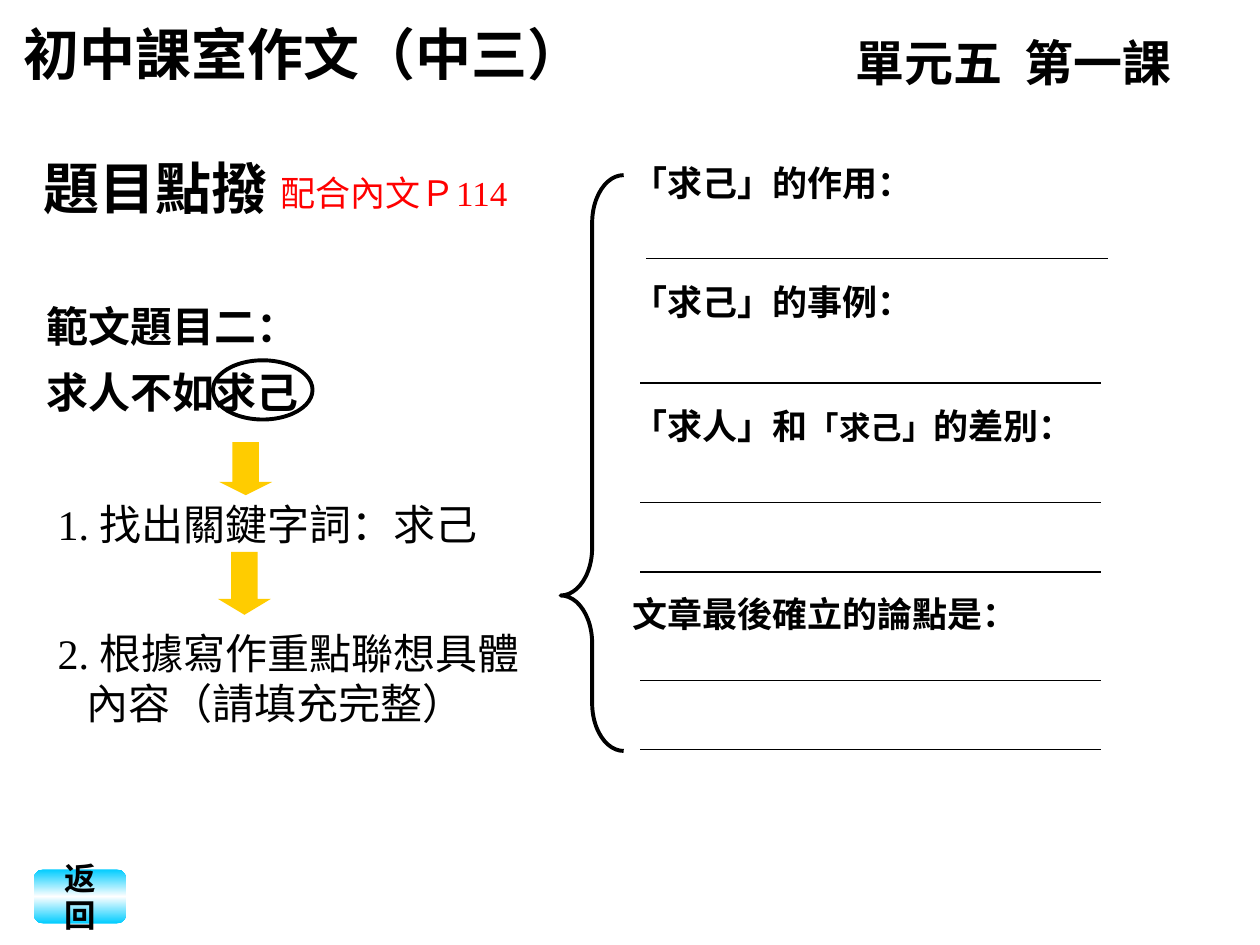
from copy import deepcopy

from lxml import etree
from pptx import Presentation
from pptx.dml.color import RGBColor
from pptx.enum.shapes import MSO_CONNECTOR, MSO_SHAPE
from pptx.enum.text import MSO_ANCHOR, PP_ALIGN
from pptx.oxml.ns import qn
from pptx.util import Inches, Pt

STRAIGHT = MSO_CONNECTOR.STRAIGHT
ELLIPSE = MSO_SHAPE.OVAL
DOWN_ARROW = MSO_SHAPE.DOWN_ARROW
RIGHT_ARROW = MSO_SHAPE.RIGHT_ARROW
LEFT_BRACE = MSO_SHAPE.LEFT_BRACE
BUTTON = MSO_SHAPE.FLOWCHART_ALTERNATE_PROCESS
MIDDLE = MSO_ANCHOR.MIDDLE
CENTER = PP_ALIGN.CENTER

COLORS = {"ink": "000000", "note": "FF0000", "arrow": "FFCC00",
          "button": "00CCFF", "shine": "FFFFFF"}
SANS, SERIF, HEADING, LATIN = "DejaVu Sans", "Times New Roman", "Cabin", "Arial"


class LessonSlide:
    """Holds the lesson style and draws each kind of element on one slide."""

    def __init__(self, slide):
        self.shapes = slide.shapes

    def color(self, name):
        return RGBColor.from_string(COLORS[name])

    def add_words(self, paragraph, words, size, font, bold=True, color="ink"):
        run = paragraph.add_run()
        run.text = words
        run.font.size = Pt(size)
        run.font.name = font
        run.font.bold = bold
        run.font.color.rgb = self.color(color)

    def text(self, box, *lines, spacing=None, hanging=0, wrap=True):
        frame = self.shapes.add_textbox(*map(Inches, box)).text_frame
        frame.word_wrap = wrap
        for index, runs in enumerate(lines):
            paragraph = frame.add_paragraph() if index else frame.paragraphs[0]
            if spacing:
                paragraph.line_spacing = spacing
            if index and hanging:
                paragraph._p.get_or_add_pPr().set("marL", str(Inches(hanging)))
            for run in runs:
                self.add_words(paragraph, *run)

    def shape(self, kind, box, fill=None, outline=None, adjustments=(), rotation=0):
        shape = self.shapes.add_shape(kind, *map(Inches, box))
        shape.shadow.inherit = False
        shape.rotation = rotation
        for index, value in enumerate(adjustments):
            shape.adjustments[index] = value
        if fill:
            shape.fill.solid()
            shape.fill.fore_color.rgb = self.color(fill)
        else:
            shape.fill.background()
        if outline:
            shape.line.color.rgb = self.color("ink")
            shape.line.width = Pt(outline)
        else:
            shape.line.fill.background()
        return shape

    def answer_line(self, left, top, width):
        line = self.shapes.add_connector(
            STRAIGHT, Inches(left), Inches(top), Inches(left + width), Inches(top))
        line.line.color.rgb = self.color("ink")
        line.line.width = Pt(0.75)
        etree.SubElement(line._element.spPr, qn("a:effectLst"))

    def button(self, box, label):
        button = self.shape(BUTTON, box)
        button.fill.gradient()
        button.fill.gradient_angle = 90
        stop_list = button._element.spPr.find(qn("a:gradFill")).find(qn("a:gsLst"))
        stop_list.append(deepcopy(stop_list[0]))
        stops = zip(button.fill.gradient_stops, (0, 0.5, 1), ("button", "shine", "button"))
        for stop, position, color in stops:
            stop.position = position
            stop.color.rgb = self.color(color)
        frame = button.text_frame
        frame.word_wrap = True
        frame.vertical_anchor = MIDDLE
        frame.paragraphs[0].alignment = CENTER
        self.add_words(frame.paragraphs[0], label, 18, LATIN)


def main():
    deck = Presentation()
    deck.slide_width, deck.slide_height = Inches(10), Inches(7.5)
    lesson = LessonSlide(deck.slides.add_slide(deck.slide_layouts[6]))

    lesson.text((0.27, 2.22, 5, 1.14), [("範文題目二：", 24, SANS)],
                [("求人不如求己", 24, SANS)], spacing=1.3)
    lesson.shape(ELLIPSE, (1.69, 2.86, 0.79, 0.47), outline=2.25)

    lesson.shape(DOWN_ARROW, (1.74, 3.51, 0.42, 0.42), "arrow", adjustments=(0.5, 0.25))
    lesson.text((0.36, 3.91, 4.33, 0.5),
                [("1. ", 24, SERIF, False), ("找出關鍵字詞：求己", 24, SANS, False)])
    lesson.shape(RIGHT_ARROW, (1.69, 4.42, 0.5, 0.42), "arrow",
                 adjustments=(0.5, 0.3), rotation=90)
    lesson.text((0.36, 4.93, 4.17, 0.9),
                [("2. ", 24, SERIF, False), ("根據寫作重點聯想具體", 24, SANS, False)],
                [("內容（請填充完整）", 24, SANS, False)], hanging=0.23)
    lesson.shape(LEFT_BRACE, (4.45, 1.39, 0.5, 4.57), outline=2.25,
                 adjustments=(0.76, 0.73))

    lesson.text((0.09, 0.11, 5.22, 0.63), [("初中課室作文（中三）", 32, HEADING)])
    lesson.text((6.69, 0.21, 3.35, 0.57), [("單元五  第一課", 28, HEADING)])
    lesson.text((0.25, 1.17, 3.08, 0.63), [("題目點撥", 32, LATIN)])
    lesson.text((2.13, 1.31, 2.47, 0.43), [("配合內文Ｐ114", 20, SERIF, False, "note")])

    lesson.text((4.92, 1.23, 2.42, 0.43), [("「求己」的作用：", 20, LATIN)], wrap=False)
    prompts = [
        (2.18, [("「求己」的事例：", 20, SANS)]),
        (3.16, [("「求人」和", 20, SANS), ("「求己」", 18, LATIN), ("的差別：", 20, SANS)]),
        (4.65, [("文章最後確立的論點是：", 20, SANS)]),
    ]
    for top, runs in prompts:
        lesson.text((4.92, top, 3.83, 0.43), runs)

    lesson.answer_line(5.13, 2.05, 3.66)
    for top in (3.04, 3.99, 4.54, 5.4, 5.95):
        lesson.answer_line(5.08, top, 3.66)

    lesson.button((0.27, 6.9, 0.73, 0.43), "返回")
    deck.save("out.pptx")


if __name__ == "__main__":
    main()
